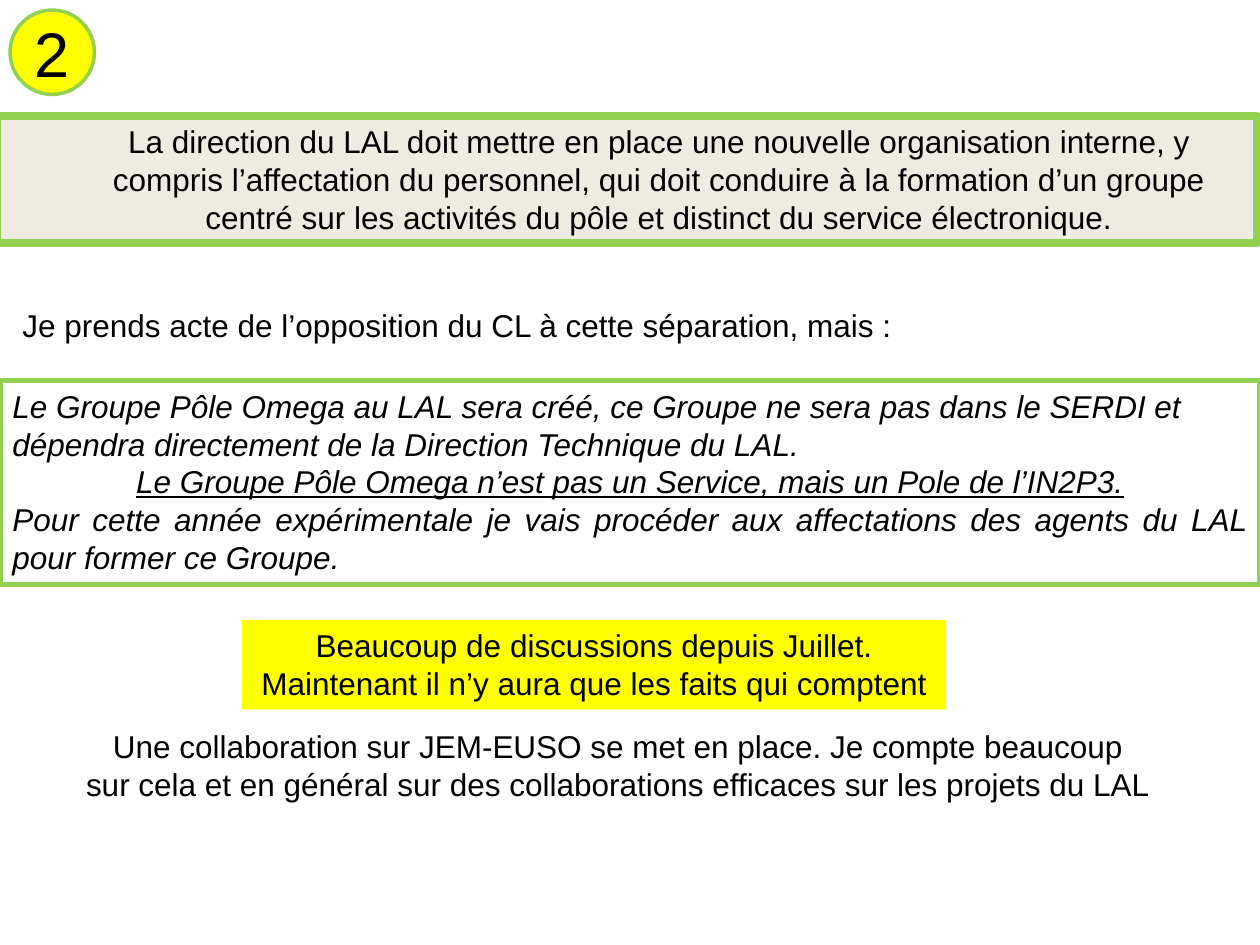
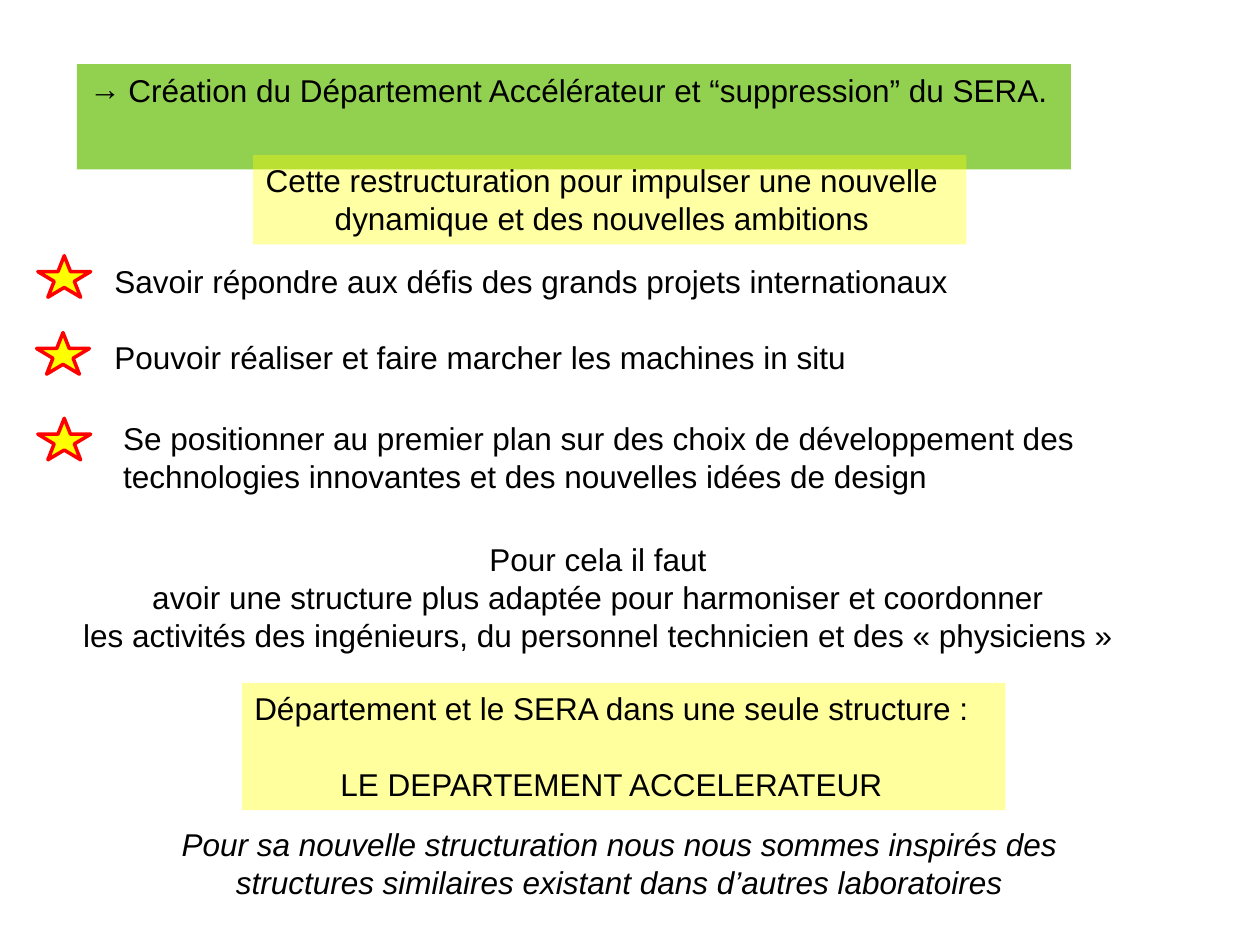
from lxml import etree
from pptx import Presentation
from pptx.dml.color import RGBColor
from pptx.enum.shapes import MSO_SHAPE
from pptx.enum.text import MSO_ANCHOR, MSO_AUTO_SIZE, PP_ALIGN
from pptx.oxml.ns import qn
from pptx.util import Inches, Pt

BLACK = RGBColor(0x00, 0x00, 0x00)
GREEN = RGBColor(0x92, 0xD0, 0x50)
YELLOW = RGBColor(0xFF, 0xFF, 0x00)
RED = RGBColor(0xFF, 0x00, 0x00)
BEIGE = RGBColor(0xEE, 0xEC, 0xE1)
FONT = "Arial"
LEFT, CENTER, JUSTIFY = PP_ALIGN.LEFT, PP_ALIGN.CENTER, PP_ALIGN.JUSTIFY


def write(sp, lines, size=18, italic=False, wrap=True, anchor=MSO_ANCHOR.TOP, grow=True):
    """Write (text, alignment) lines into a shape and format them."""
    tf = sp.text_frame
    tf.text = "\n".join(text for text, _ in lines)
    tf.word_wrap = wrap
    tf.vertical_anchor = anchor
    tf.auto_size = MSO_AUTO_SIZE.SHAPE_TO_FIT_TEXT if grow else MSO_AUTO_SIZE.NONE
    for p, (_, align) in zip(tf.paragraphs, lines):
        p.alignment = align
        for r in p.runs:
            r.font.name, r.font.size = FONT, Pt(size)
            r.font.italic = italic
            r.font.color.rgb = BLACK
    return tf


def paint(sp, fill=None, line=None, width=2, opacity=None):
    """Set the fill, its opacity in percent, and the outline of a shape."""
    if fill is None:
        sp.fill.background()
    else:
        sp.fill.solid()
        sp.fill.fore_color.rgb = fill
    if opacity is not None:
        color = sp.fill._xPr.find(qn("a:solidFill"))[0]
        etree.SubElement(color, qn("a:alpha")).set("val", str(opacity * 1000))
    if line is None:
        sp.line.fill.background()
    else:
        sp.line.color.rgb = line
        sp.line.width = Pt(width)


def add_shape(s, kind, box, **style):
    """Add a painted preset shape without shadow."""
    sp = s.shapes.add_shape(kind, *map(Inches, box))
    sp.shadow.inherit = False
    paint(sp, **style)
    return sp


def add_text(s, box, lines, **style):
    """Add a plain text box."""
    return write(s.shapes.add_textbox(*map(Inches, box)), lines, **style)


def add_panel(s, box, lines, italic=False, wrap=False, **style):
    """Add a rectangle holding text."""
    return write(add_shape(s, MSO_SHAPE.RECTANGLE, box, **style), lines, italic=italic, wrap=wrap)


def add_title_band(s, box, text, align, margin, hanging=0, bullet=None, **style):
    """Turn the title placeholder into a coloured band."""
    sp = s.shapes.title
    sp.left, sp.top, sp.width, sp.height = map(Inches, box)
    paint(sp, **style)
    p = write(sp, [(text, align)]).paragraphs[0]
    pPr = p._p.get_or_add_pPr()
    pPr.set("marL", str(Inches(margin)))
    pPr.set("indent", str(-Inches(hanging)))
    if bullet:
        etree.SubElement(pPr, qn("a:buFont")).set("typeface", FONT)
        etree.SubElement(pPr, qn("a:buChar")).set("char", bullet)


def add_star(s, left, top):
    """Add a star marking one ambition."""
    add_shape(s, MSO_SHAPE.STAR_5_POINT, (left, top, 0.42, 0.33), fill=YELLOW, line=RED)


def build_group_slide(prs):
    """Build the slide on the new group."""
    s = prs.slides.add_slide(prs.slide_layouts[5])
    add_title_band(
        s, (-0.02, 0.92, 10, 1.01),
        "La direction du LAL doit mettre en place une nouvelle organisation interne, y compris "
        "l’affectation du personnel, qui doit conduire à la formation d’un groupe centré sur les "
        "activités du pôle et distinct du service électronique.",
        CENTER, 0.5, fill=BEIGE, line=GREEN, width=4.5)
    number = add_shape(s, MSO_SHAPE.OVAL, (0.08, 0.08, 0.67, 0.67), fill=YELLOW, line=GREEN)
    write(number, [("2", CENTER)], size=36, anchor=MSO_ANCHOR.MIDDLE, grow=False)
    add_text(s, (0.08, 2.38, 7.22, 0.4), [
        ("Je prends acte de l’opposition du CL à cette séparation, mais :", LEFT)], wrap=False)
    decision = add_panel(s, (0, 3.02, 10, 1.62), [
        ("Le Groupe Pôle Omega au LAL sera créé, ce Groupe ne sera pas dans le SERDI et "
         "dépendra directement de la Direction Technique du LAL.", LEFT),
        ("Le Groupe Pôle Omega n’est pas un Service, mais un Pole de l’IN2P3.", CENTER),
        ("Pour cette année expérimentale je vais procéder aux affectations des agents du LAL "
         "pour former ce Groupe.", JUSTIFY),
    ], italic=True, wrap=True, line=GREEN, width=3)
    decision.paragraphs[1].runs[0].font.underline = True
    add_panel(s, (1.92, 4.92, 5.59, 0.71), [
        ("Beaucoup de discussions depuis Juillet.", CENTER),
        ("Maintenant il n’y aura que les faits qui comptent", CENTER)], fill=YELLOW)
    add_text(s, (0.43, 5.72, 8.95, 0.71), [
        ("Une collaboration sur JEM-EUSO se met en place. Je compte beaucoup", CENTER),
        ("sur cela et en général sur des collaborations efficaces sur les projets du LAL", CENTER),
    ], wrap=False)


def build_department_slide(prs):
    """Build the slide on the accelerator department."""
    s = prs.slides.add_slide(prs.slide_layouts[5])
    add_title_band(
        s, (0.61, 0.51, 7.89, 0.4),
        "Création du Département Accélérateur et “suppression” du SERA.",
        LEFT, 0.31, hanging=0.31, bullet="→", fill=GREEN)
    add_panel(s, (2.01, 1.23, 5.66, 0.71), [
        ("Cette restructuration pour impulser une nouvelle", LEFT),
        ("dynamique et des nouvelles ambitions", CENTER)], fill=YELLOW, opacity=36)
    ambitions = [
        ((0.81, 2.03, 6.88, 0.4), (0.3, 2.03),
         ["Savoir répondre aux défis des grands projets internationaux"]),
        ((0.81, 2.63, 6.06, 0.4), (0.29, 2.64),
         ["Pouvoir réaliser et faire marcher les machines in situ"]),
        ((0.88, 3.28, 7.96, 0.71), (0.3, 3.32),
         ["Se positionner au premier plan sur des choix de développement des",
          "technologies innovantes et des nouvelles idées de design"]),
    ]
    for box, star, texts in ambitions:
        add_text(s, box, [(text, LEFT) for text in texts], wrap=False)
        add_star(s, *star)
    add_text(s, (0.52, 4.24, 8.45, 1.01), [
        ("Pour cela il faut", CENTER),
        ("avoir une structure plus adaptée pour harmoniser et coordonner", CENTER),
        ("les activités des ingénieurs, du personnel technicien et des « physiciens »", CENTER),
    ], wrap=False)
    merger = add_panel(s, (1.92, 5.42, 6.06, 1.01), [
        ("Département et le SERA dans une seule structure :", LEFT),
        ("LE DEPARTEMENT ACCELERATEUR", CENTER)], fill=YELLOW, opacity=38)
    merger.paragraphs[1].space_before = Pt(21.6)
    add_text(s, (1.33, 6.5, 7.17, 0.71), [
        ("Pour sa nouvelle structuration nous nous sommes inspirés des structures similaires "
         "existant dans d’autres laboratoires", CENTER)], italic=True)


def main():
    """Build and save the two slides."""
    prs = Presentation()
    prs.slide_width, prs.slide_height = Inches(10), Inches(7.5)
    build_group_slide(prs)
    build_department_slide(prs)
    prs.save("out.pptx")


if __name__ == "__main__":
    main()
